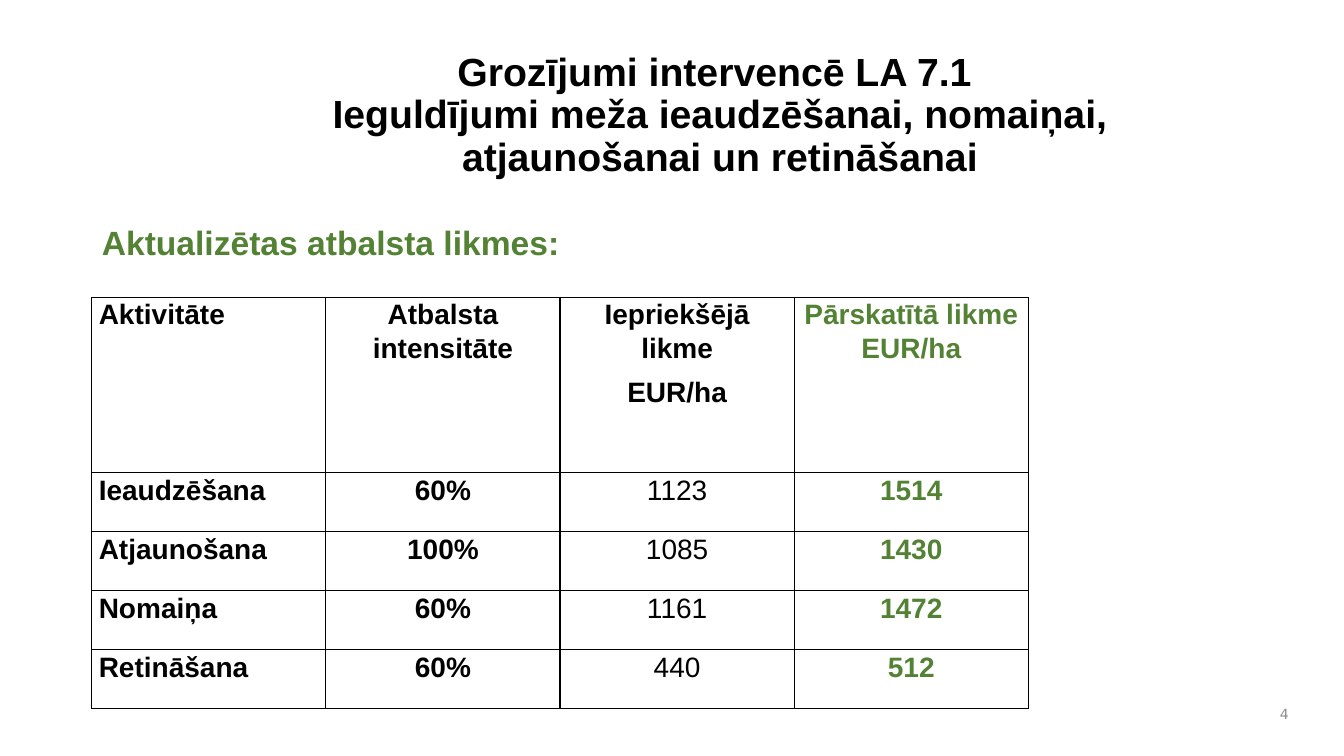
import pptx
import pptx.util
import pptx.dml.color
import pptx.enum.text
from dataclasses import dataclass
from lxml import etree
from pptx.util import Inches

ALIGN = pptx.enum.text.PP_ALIGN
ANCHOR = pptx.enum.text.MSO_ANCHOR
NS = "http://schemas.openxmlformats.org/drawingml/2006/main"


@dataclass(frozen=True)
class Theme:
    black: str = "000000"
    green: str = "548235"
    grey: str = "8C8C8C"
    face: str = "Arial"
    num_face: str = "DejaVu Sans"
    title: int = 28
    lead: int = 24
    cell: int = 20
    num: int = 10


THEME = Theme()

TITLE = ("Grozījumi intervencē LA 7.1 \v"
         "Ieguldījumi meža ieaudzēšanai, nomaiņai, atjaunošanai un retināšanai")
RATES = [
    ["Aktivitāte", "Atbalsta intensitāte", "Iepriekšējā likme\nEUR/ha",
     "Pārskatītā likme EUR/ha"],
    ["Ieaudzēšana", "60%", "1123", "1514"],
    ["Atjaunošana", "100%", "1085", "1430"],
    ["Nomaiņa", "60%", "1161", "1472"],
    ["Retināšana", "60%", "440", "512"],
]


def style(para, size, color, bold=True, face=THEME.face, align=ALIGN.LEFT,
          line=1.0, after=0):
    para.alignment = align
    para.line_spacing = line
    para.space_before = pptx.util.Pt(0)
    para.space_after = pptx.util.Pt(after)
    font = para.font
    font.name, font.size, font.bold = face, pptx.util.Pt(size), bold
    font.color.rgb = pptx.dml.color.RGBColor.from_string(color)


def place(shape, left, top, width, height):
    shape.left, shape.top = Inches(left), Inches(top)
    shape.width, shape.height = Inches(width), Inches(height)


def fill_box(shape, text, anchor=ANCHOR.TOP):
    frame = shape.text_frame
    frame.word_wrap = True
    frame.auto_size = pptx.enum.text.MSO_AUTO_SIZE.NONE
    frame.vertical_anchor = anchor
    frame.text = text
    return frame.paragraphs[0]


def add_title(slide):
    place(slide.shapes.title, 2.11, 0.47, 10.06, 1.55)
    para = fill_box(slide.shapes.title, TITLE)
    style(para, THEME.title, THEME.black, align=ALIGN.CENTER, line=0.9)


def add_lead(slide):
    body = slide.placeholders[1]
    place(body, 0.91, 2.15, 11.62, 0.7)
    para = fill_box(body, "Aktualizētas atbalsta likmes:")
    # Plain line: no bullet, no hanging indent
    props = para._p.get_or_add_pPr()
    props.set("marL", "0")
    props.set("indent", "0")
    etree.SubElement(props, f"{{{NS}}}buNone")
    style(para, THEME.lead, THEME.green)


def add_number(slide):
    box = slide.shapes.add_textbox(
        Inches(12.44), Inches(6.92), Inches(0.44), Inches(0.33))
    para = fill_box(box, "4", ANCHOR.MIDDLE)
    style(para, THEME.num, THEME.grey, bold=False, face=THEME.num_face,
          align=ALIGN.RIGHT)


def add_border(cell):
    props = cell._tc.get_or_add_tcPr()
    for spot, side in enumerate(("lnL", "lnR", "lnT", "lnB")):
        line = etree.Element(f"{{{NS}}}{side}", w=str(pptx.util.Pt(1)))
        solid = etree.SubElement(line, f"{{{NS}}}solidFill")
        etree.SubElement(solid, f"{{{NS}}}srgbClr", val=THEME.black)
        props.insert(spot, line)


def fill_cell(cell, text, row, col):
    cell.fill.background()
    add_border(cell)
    cell.margin_left = cell.margin_right = Inches(0.07)
    cell.margin_top = cell.margin_bottom = Inches(0)
    cell.text = text
    for para in cell.text_frame.paragraphs:
        style(para, THEME.cell,
              THEME.green if col == 3 else THEME.black,
              bold=row == 0 or col != 2,
              align=ALIGN.CENTER if col else ALIGN.LEFT,
              line=1.07, after=8)


def add_rates(slide):
    table = slide.shapes.add_table(
        len(RATES), len(RATES[0]), Inches(0.91), Inches(2.95),
        Inches(9.29), Inches(4.08)).table
    table.first_row = table.horz_banding = False
    for col in table.columns:
        col.width = Inches(9.29 / len(RATES[0]))
    for row, texts in enumerate(RATES):
        table.rows[row].height = Inches(0.585 if row else 1.74)
        for col, text in enumerate(texts):
            fill_cell(table.cell(row, col), text, row, col)


def main():
    deck = pptx.Presentation()
    deck.slide_width, deck.slide_height = Inches(13.33), Inches(7.5)
    slide = deck.slides.add_slide(deck.slide_layouts[1])
    add_title(slide)
    add_lead(slide)
    add_rates(slide)
    add_number(slide)
    deck.save("out.pptx")


if __name__ == "__main__":
    main()
